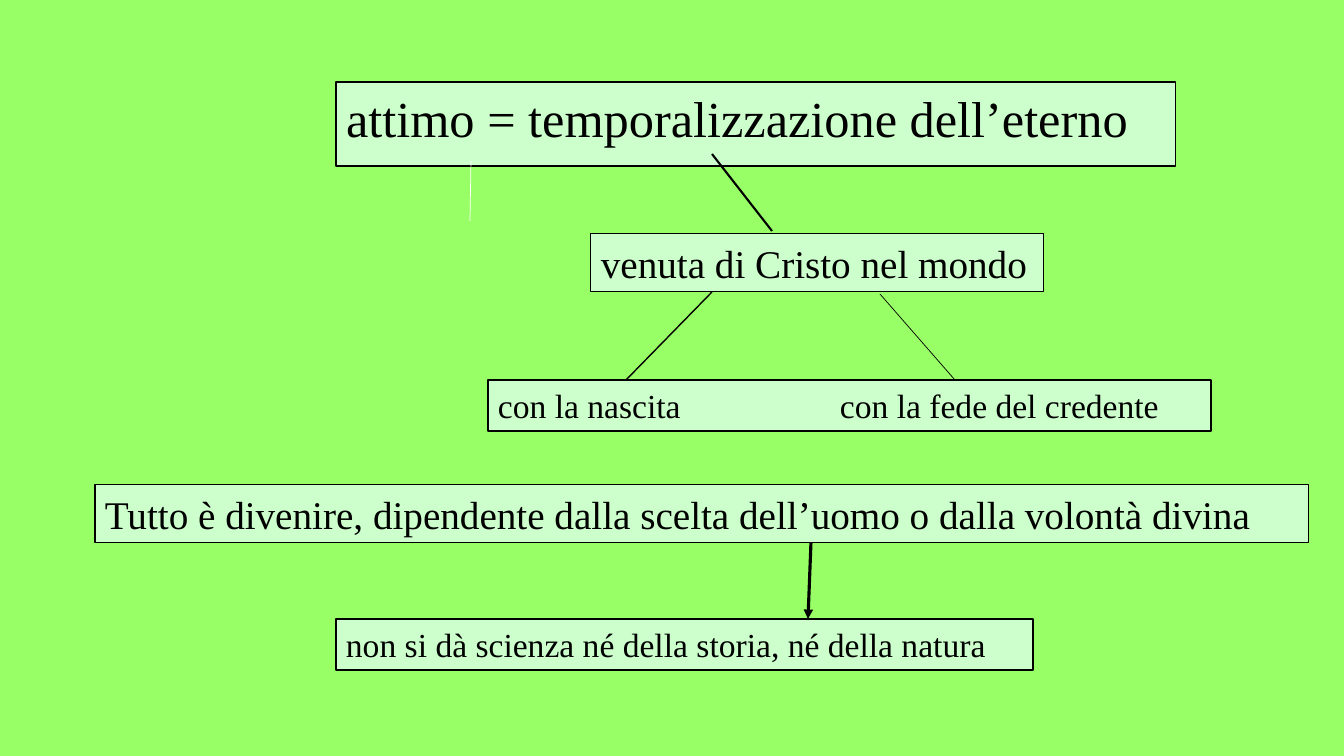
"""Build a concept-map slide about the instant and the eternal."""
from dataclasses import dataclass

from lxml import etree
from pptx import Presentation
from pptx import util as u
from pptx.dml.color import RGBColor
from pptx.enum import shapes, text
from pptx.oxml.ns import qn

PX_PER_INCH = 100.8
FONT = "Times New Roman"
BLACK, WHITE = "000000", "FFFFFF"
BACKGROUND, BOX_FILL = "99FF66", "CCFFCC"


@dataclass(frozen=True)
class Box:
    words: str
    left: int
    top: int
    width: int
    height: int
    size: int
    border: float = 0.75
    tab: int = 0


@dataclass(frozen=True)
class Link:
    start: tuple[int, int]
    end: tuple[int, int]
    width: float
    color: str = BLACK
    arrow: bool = False


TITLE = Box("attimo = temporalizzazione dell’eterno", 336, 82, 840, 71, 36)
BOXES = [
    Box("venuta di Cristo nel mondo", 591, 234, 453, 58, 28),
    Box("con la nascita\tcon la fede del credente", 488, 380, 723, 51, 24, 1, 342),
    Box("Tutto è divenire, dipendente dalla scelta dell’uomo o dalla volontà divina",
        95, 485, 1214, 58, 28),
    Box("non si dà scienza né della storia, né della natura", 336, 619, 697, 51, 24, 1),
]
LINKS = [
    Link((471, 161), (470, 221), 0.5, WHITE),
    Link((712, 154), (772, 231), 1.5),
    Link((712, 292), (626, 380), 1),
    Link((880, 294), (955, 380), 0.5),
    Link((811, 543), (808, 619), 2.25, arrow=True),
]


def px(length: int) -> int:
    return u.Inches(length / PX_PER_INCH)


def paint(target, color: str) -> None:
    target.solid()
    target.fore_color.rgb = RGBColor.from_string(color)


def format_box(shape, box: Box) -> None:
    shape.left, shape.top = px(box.left), px(box.top)
    shape.width, shape.height = px(box.width), px(box.height)
    paint(shape.fill, BOX_FILL)
    paint(shape.line.fill, BLACK)
    shape.line.width = u.Pt(box.border)
    frame = shape.text_frame
    frame.text = box.words
    frame.word_wrap = True
    frame.auto_size = text.MSO_AUTO_SIZE.SHAPE_TO_FIT_TEXT
    frame.vertical_anchor = text.MSO_ANCHOR.TOP
    paragraph = frame.paragraphs[0]
    paragraph.alignment = text.PP_ALIGN.LEFT
    if box.tab:
        properties = paragraph._p.get_or_add_pPr()
        stops = etree.SubElement(properties, qn("a:tabLst"))
        etree.SubElement(stops, qn("a:tab"), pos=str(px(box.tab)), algn="l")
    paragraph.font.name = FONT
    paragraph.font.size = u.Pt(box.size)
    paint(paragraph.font.fill, BLACK)


def add_box(slide, box: Box) -> None:
    shape = slide.shapes.add_shape(shapes.MSO_SHAPE.RECTANGLE, 0, 0, 0, 0)
    shape.shadow.inherit = False
    format_box(shape, box)


def add_link(slide, link: Link) -> None:
    connector = slide.shapes.add_connector(
        shapes.MSO_CONNECTOR.STRAIGHT, *map(px, link.start + link.end))
    paint(connector.line.fill, link.color)
    connector.line.width = u.Pt(link.width)
    if link.arrow:
        etree.SubElement(connector.line._get_or_add_ln(), qn("a:tailEnd"), type="triangle")
    etree.SubElement(connector._element.spPr, qn("a:effectLst"))


def main() -> None:
    presentation = Presentation()
    presentation.slide_width, presentation.slide_height = px(1344), px(756)
    slide = presentation.slides.add_slide(presentation.slide_layouts.get_by_name("Title Only"))
    paint(slide.background.fill, BACKGROUND)
    format_box(slide.shapes.title, TITLE)
    for box in BOXES:
        add_box(slide, box)
    for link in LINKS:
        add_link(slide, link)
    presentation.save("out.pptx")


if __name__ == "__main__":
    main()
